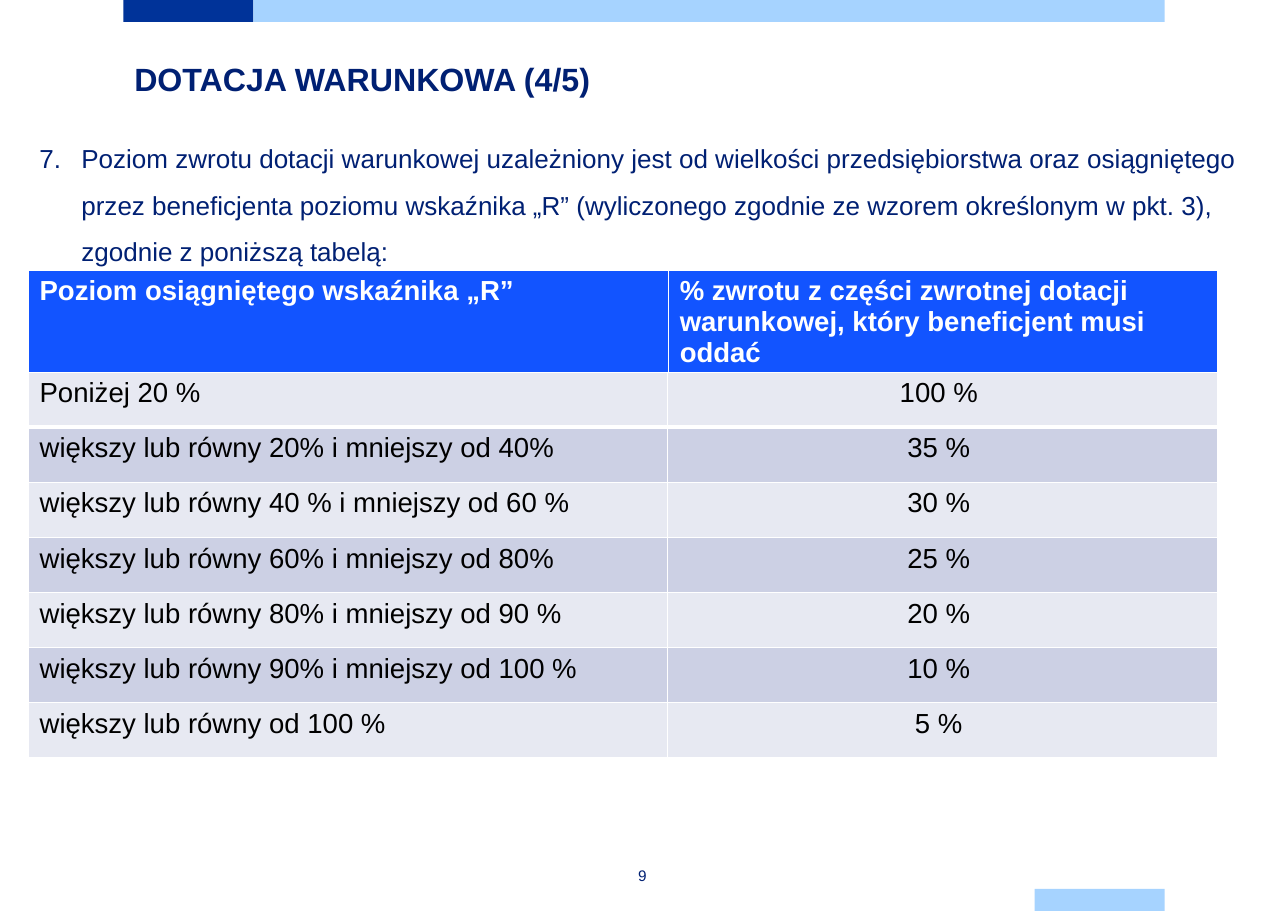
import pptx
import pptx.util
import pptx.dml.color
import pptx.enum.shapes
import pptx.enum.text
import pptx.oxml.ns
from lxml import etree

EMU_PER_PX = 9144
NAVY = "002073"
LIGHT_BLUE = "A6D3FF"
WHITE = "FFFFFF"
HEADINGS = [["Poziom osiągniętego wskaźnika „R”",
             "% zwrotu z części zwrotnej dotacji warunkowej, który beneficjent musi oddać"]]
RETURN_LEVELS = [
    ["Poniżej 20 %", "100 % "],
    ["większy lub równy 20% i mniejszy od 40%", "35 % "],
    ["większy lub równy 40 % i mniejszy od 60 %", "30 % "],
    ["większy lub równy 60% i mniejszy od 80%", "25 % "],
    ["większy lub równy 80% i mniejszy od 90 %", "20 % "],
    ["większy lub równy 90% i mniejszy od 100 %", "10 % "],
    ["większy lub równy od 100 %", "5 % "],
]
CENTER = pptx.enum.text.PP_ALIGN.CENTER


def px(length):
    """Turn px into EMU."""
    return pptx.util.Emu(length * EMU_PER_PX)


def color(value):
    """Turn a hex string into a colour."""
    return pptx.dml.color.RGBColor.from_string(value)


def add_child(parent, tag, **attributes):
    """Append a DrawingML element."""
    return etree.SubElement(parent, pptx.oxml.ns.qn(tag), attributes)


def format_runs(paragraph, size, hex_color, bold=False):
    """Set the font of every run in a paragraph."""
    for run in paragraph.runs:
        run.font.name = "Arial"
        run.font.size = pptx.util.Pt(size)
        run.font.bold = bold
        run.font.color.rgb = color(hex_color)


def add_bar(slide, left, top, width, height, fill):
    """Draw one plain bar."""
    shape = slide.shapes.add_shape(pptx.enum.shapes.MSO_SHAPE.RECTANGLE,
                                   px(left), px(top), px(width), px(height))
    shape.shadow.inherit = False
    shape.fill.solid()
    shape.fill.fore_color.rgb = color(fill)
    shape.line.fill.background()


def add_bars(slide, left, width, bottom):
    """Place the top and bottom bars between the page margins."""
    accent, height = 118, 20
    add_bar(slide, left, 0, accent, height, "003399")
    add_bar(slide, left + accent, 0, width - accent, height, LIGHT_BLUE)
    add_bar(slide, left + width - accent, bottom - height, accent, height, LIGHT_BLUE)


def add_text(slide, left, top, width, height, text, size, bold=False, spacing=1.0):
    """Place a wrapped one-paragraph text box and return it."""
    box = slide.shapes.add_textbox(px(left), px(top), px(width), px(height))
    box.text_frame.word_wrap = True
    box.text_frame.text = text
    paragraph = box.text_frame.paragraphs[0]
    paragraph.line_spacing = spacing
    format_runs(paragraph, size, NAVY, bold)
    return box


def add_numbered_point(slide, left, top, width, height, number, text):
    """Place a paragraph with an automatic number and a hanging indent."""
    box = add_text(slide, left, top, width, height, text, 17, spacing=1.5)
    properties = box.text_frame.paragraphs[0]._p.get_or_add_pPr()
    properties.set("marL", str(px(38)))
    properties.set("indent", str(px(-38)))
    add_child(properties, "a:buFont", typeface="+mj-lt")
    add_child(properties, "a:buAutoNum", type="arabicPeriod", startAt=str(number))


def add_page_number(slide, left, top, width, height, number):
    """Place the centred page number."""
    frame = add_text(slide, left, top, width, height, number, 10).text_frame
    frame.margin_left = frame.margin_right = 0
    frame.margin_top = frame.margin_bottom = px(8)
    frame.vertical_anchor = pptx.enum.text.MSO_ANCHOR.MIDDLE
    frame.paragraphs[0].alignment = CENTER


def style_cell(cell, fill, text_color, bold, bottom_width):
    """Set a cell's font, white borders and fill."""
    format_runs(cell.text_frame.paragraphs[0], 18, text_color, bold)
    properties = cell._tc.get_or_add_tcPr()
    for side, width in (("L", 1), ("R", 1), ("T", 1), ("B", bottom_width)):
        line = add_child(properties, f"a:ln{side}", w=str(pptx.util.Pt(width)))
        add_child(add_child(line, "a:solidFill"), "a:srgbClr", val=WHITE)
    cell.fill.solid()
    cell.fill.fore_color.rgb = color(fill)


def add_level_table(slide, left, top, column_widths, row_height, rows, fills,
                    text_color="000000", header=False):
    """Place a two-column table with alternating row fills."""
    frame = slide.shapes.add_table(len(rows), len(column_widths), px(left), px(top),
                                   px(sum(column_widths)), px(row_height * len(rows)))
    table = frame.table
    table.first_row = header
    table.horz_banding = False
    for column, width in zip(table.columns, column_widths):
        column.width = px(width)
    for row_index, texts in enumerate(rows):
        table.rows[row_index].height = px(row_height)
        for column_index, text in enumerate(texts):
            cell = table.cell(row_index, column_index)
            cell.text_frame.text = text
            if column_index == 1 and not header:
                cell.text_frame.paragraphs[0].alignment = CENTER
            style_cell(cell, fills[row_index % len(fills)], text_color, header,
                       3 if row_index == 0 else 1)


def main():
    """Build the slide and save it."""
    presentation = pptx.Presentation()
    presentation.slide_width = px(1169)
    presentation.slide_height = px(827)
    slide = presentation.slides.add_slide(presentation.slide_layouts[6])
    add_bars(slide, 112, 945, 827)
    add_text(slide, 112, 40, 1022, 50, "DOTACJA WARUNKOWA (4/5)", 21, True, 1.25)
    add_numbered_point(
        slide, 26, 110, 1118, 130, 7,
        "Poziom zwrotu dotacji warunkowej uzależniony jest od wielkości przedsiębiorstwa "
        "oraz osiągniętego przez beneficjenta poziomu wskaźnika „R” (wyliczonego zgodnie "
        "ze wzorem określonym w pkt. 3), zgodnie z poniższą tabelą:")
    add_level_table(slide, 26, 245, [581, 498], 93, HEADINGS, ["1254FF"], WHITE, True)
    add_level_table(slide, 26, 338, [580, 499], 50, RETURN_LEVELS, ["E7E9F2", "CCD0E4"])
    add_page_number(slide, 524, 785, 118, 20, "9")
    presentation.save("out.pptx")


if __name__ == "__main__":
    main()
